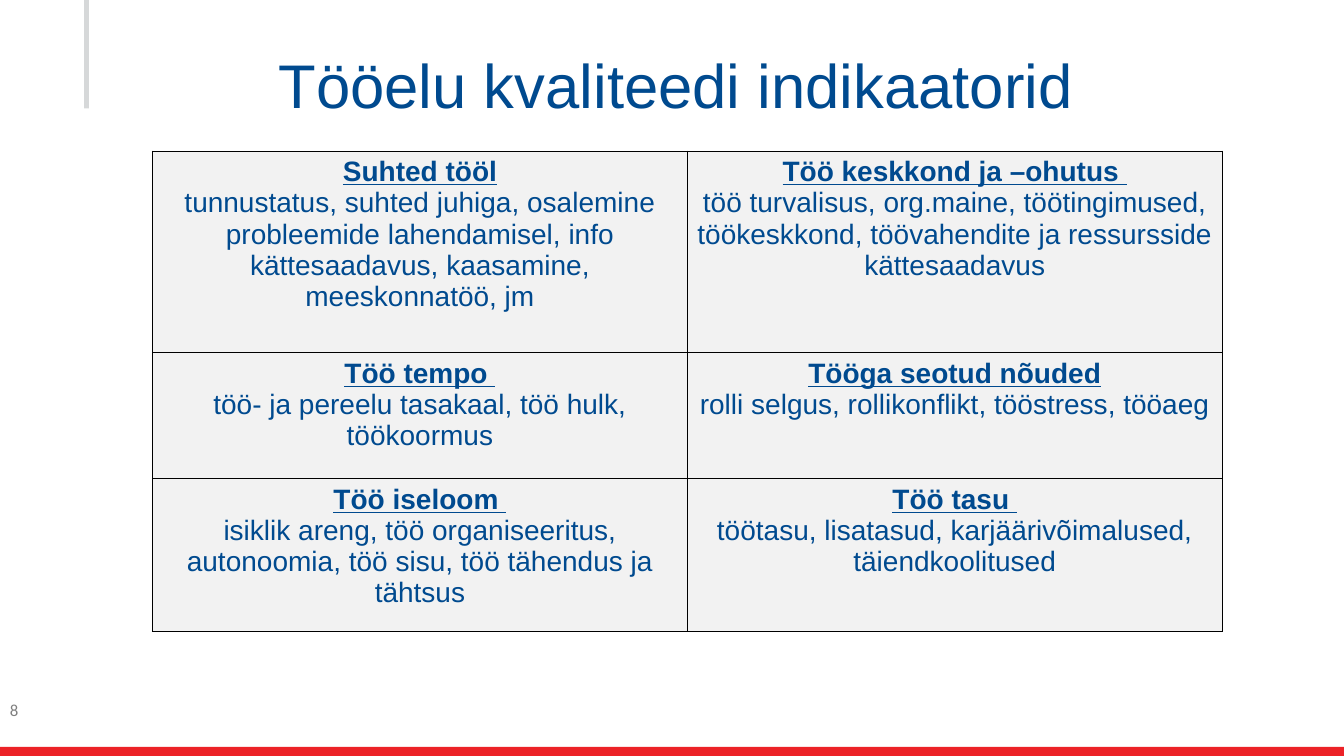
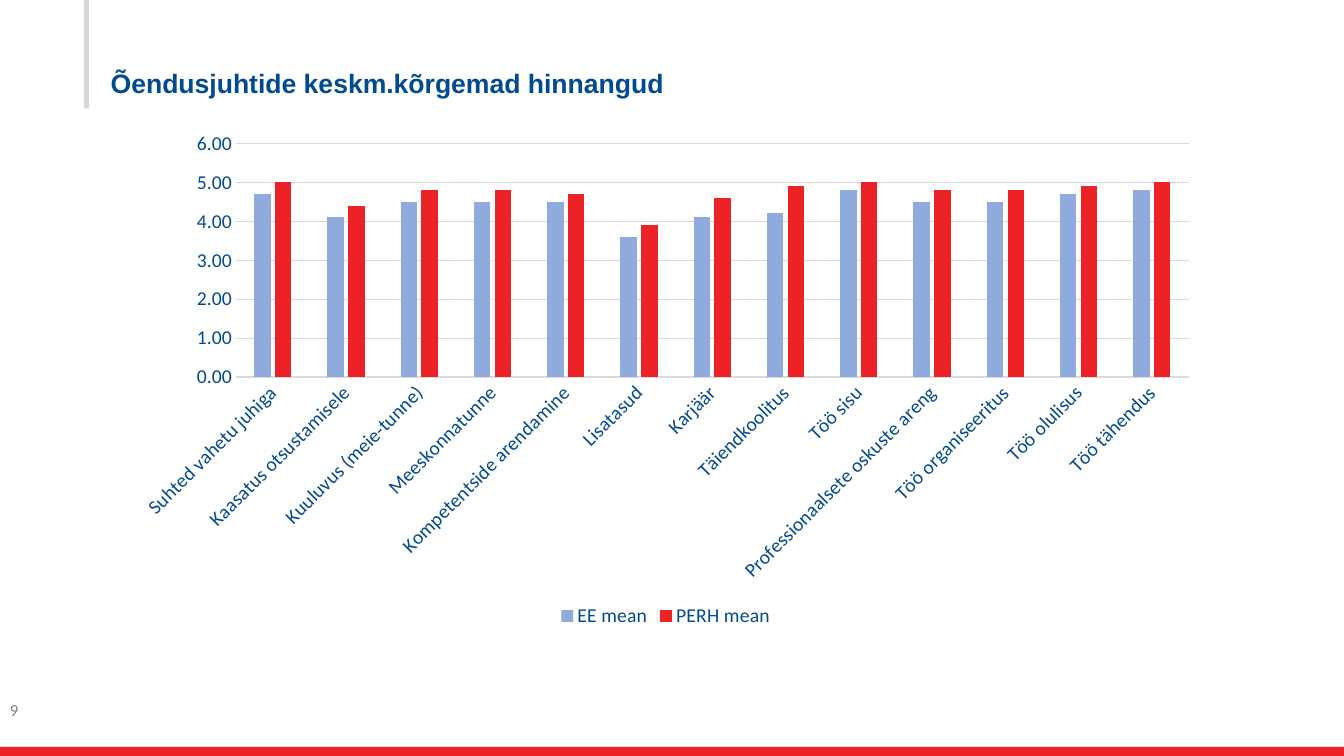
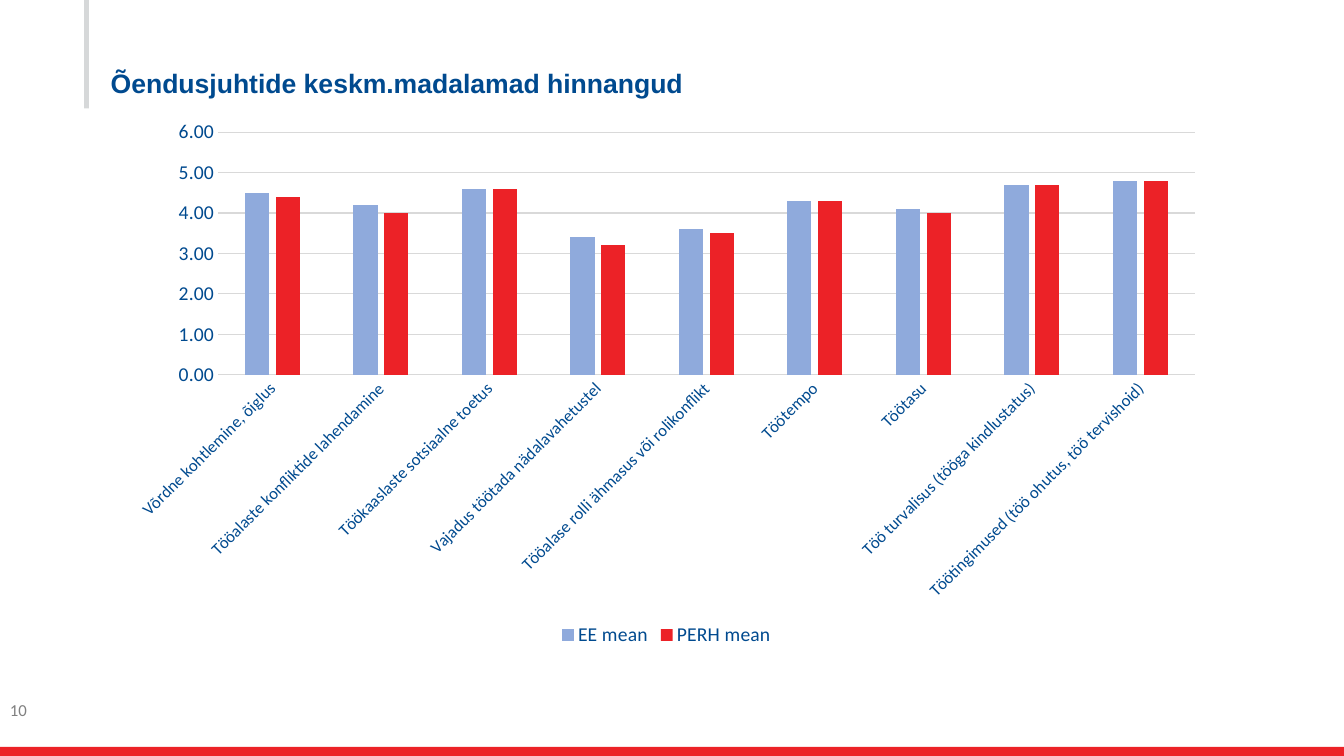
from pptx import Presentation
from pptx.chart.data import CategoryChartData
from pptx.dml.color import RGBColor
from pptx.enum.chart import XL_CHART_TYPE, XL_LEGEND_POSITION, XL_TICK_MARK
from pptx.enum.shapes import MSO_SHAPE
from pptx.enum.text import PP_ALIGN
from pptx.oxml import parse_xml
from pptx.oxml.ns import nsdecls
from pptx.util import Pt

WIDTH, HEIGHT = 960, 540
BLUE, LIGHT_BLUE, RED = "004A8F", "8FAADC", "EC2227"
GRAY, RULE_GRAY, GRID_GRAY, CELL_GRAY, BLACK = "808080", "D6D8D9", "D9D9D9", "F2F2F2", "000000"


def color(value):
    return RGBColor.from_string(value)


def format_font(font, size, name="Calibri", fill=BLUE, bold=False, underline=False):
    font.size = Pt(size)
    font.name = name
    font.bold = bold
    font.underline = underline
    font.color.rgb = color(fill)


def write(paragraph, text, align=PP_ALIGN.LEFT, **style):
    paragraph.alignment = align
    run = paragraph.add_run()
    run.text = text
    format_font(run.font, **style)


def outline_cell(cell):
    properties = cell._tc.get_or_add_tcPr()
    for index, side in enumerate(("lnL", "lnR", "lnT", "lnB")):
        properties.insert(index, parse_xml(
            f'<a:{side} {nsdecls("a")} w="{Pt(1)}"><a:solidFill>'
            f'<a:srgbClr val="{BLACK}"/></a:solidFill></a:{side}>'))


class Deck:
    def __init__(self):
        self.presentation = Presentation()
        self.presentation.slide_width = Pt(WIDTH)
        self.presentation.slide_height = Pt(HEIGHT)
        self.slide = None

    def add_slide(self, number):
        self.slide = self.presentation.slides.add_slide(self.presentation.slide_layouts[6])
        self.bar(60, 0, 3.5, 77.5, RULE_GRAY)
        self.bar(0, 533.5, WIDTH, 6.5, RED)
        self.text(0, 496, 216, 29, str(number), size=12, fill=GRAY)

    def bar(self, left, top, width, height, fill):
        shape = self.slide.shapes.add_shape(
            MSO_SHAPE.RECTANGLE, Pt(left), Pt(top), Pt(width), Pt(height))
        shape.shadow.inherit = False
        shape.fill.solid()
        shape.fill.fore_color.rgb = color(fill)
        shape.line.fill.background()

    def text(self, left, top, width, height, text, **style):
        box = self.slide.shapes.add_textbox(Pt(left), Pt(top), Pt(width), Pt(height))
        box.text_frame.word_wrap = True
        write(box.text_frame.paragraphs[0], text, **style)

    def title(self, text):
        self.text(69, 30, 828, 73, text, align=PP_ALIGN.CENTER, size=44, name="Arial")

    def heading(self, text):
        self.text(72, 44, 828, 32, text, size=19, name="Arial", bold=True)

    def table(self, left, top, column_width, row_heights, rows):
        columns = len(rows[0])
        table = self.slide.shapes.add_table(
            len(rows), columns, Pt(left), Pt(top),
            Pt(column_width * columns), Pt(sum(row_heights))).table
        for column in table.columns:
            column.width = Pt(column_width)
        for row, height, entries in zip(table.rows, row_heights, rows):
            row.height = Pt(height)
            for cell, (topic, details) in zip(row.cells, entries):
                cell.fill.solid()
                cell.fill.fore_color.rgb = color(CELL_GRAY)
                outline_cell(cell)
                style = dict(align=PP_ALIGN.CENTER, size=20, name="Arial")
                frame = cell.text_frame
                write(frame.paragraphs[0], topic, bold=True, underline=True, **style)
                write(frame.add_paragraph(), details, **style)

    def chart(self, left, top, width, height, ratings, category_size):
        data = CategoryChartData(number_format="0.00")
        data.categories = [name for name, _, _ in ratings]
        data.add_series("EE mean", [mean for _, mean, _ in ratings])
        data.add_series("PERH mean", [mean for _, _, mean in ratings])
        chart = self.slide.shapes.add_chart(
            XL_CHART_TYPE.COLUMN_CLUSTERED, Pt(left), Pt(top), Pt(width), Pt(height), data).chart
        chart.has_title = False
        format_font(chart.font, 10, fill=BLACK)
        chart.has_legend = True
        chart.legend.position = XL_LEGEND_POSITION.BOTTOM
        chart.legend.include_in_layout = False
        format_font(chart.legend.font, 14)

        plot = chart.plots[0]
        plot.gap_width = 219
        plot.overlap = -27
        plot.vary_by_categories = False
        for series, fill in zip(plot.series, (LIGHT_BLUE, RED)):
            series.format.fill.solid()
            series.format.fill.fore_color.rgb = color(fill)
            series.invert_if_negative = False

        categories, values = chart.category_axis, chart.value_axis
        for axis, size in ((categories, category_size), (values, 14)):
            axis.major_tick_mark = axis.minor_tick_mark = XL_TICK_MARK.NONE
            format_font(axis.tick_labels.font, size)
        body = categories._element.txPr.bodyPr
        body.set("rot", str(-45 * 60000))
        body.set("vert", "horz")
        values.minimum_scale, values.maximum_scale, values.major_unit = 0, 6, 1
        values.tick_labels.number_format = "0.00"
        values.tick_labels.number_format_is_linked = False
        values.format.line.fill.background()
        values.has_major_gridlines = True
        for line in (categories.format.line, values.major_gridlines.format.line):
            line.color.rgb = color(GRID_GRAY)
            line.width = Pt(0.75)


INDICATORS = [
    [("Suhted tööl",
      "tunnustatus, suhted juhiga, osalemine probleemide lahendamisel, info "
      "kättesaadavus, kaasamine, meeskonnatöö, jm"),
     ("Töö keskkond ja –ohutus ",
      "töö turvalisus, org.maine, töötingimused, töökeskkond, töövahendite ja "
      "ressursside kättesaadavus")],
    [("Töö tempo ", "töö- ja pereelu tasakaal, töö hulk, töökoormus"),
     ("Tööga seotud nõuded", "rolli selgus, rollikonflikt, tööstress, tööaeg")],
    [("Töö iseloom ",
      "isiklik areng, töö organiseeritus, autonoomia, töö sisu, töö tähendus ja tähtsus"),
     ("Töö tasu ", "töötasu, lisatasud, karjäärivõimalused, täiendkoolitused")],
]

HIGHER_RATINGS = [
    ("Suhted vahetu juhiga", 4.7, 5),
    ("Kaasatus otsustamisele", 4.1, 4.4),
    ("Kuuluvus (meie-tunne)", 4.5, 4.8),
    ("Meeskonnatunne", 4.5, 4.8),
    ("Kompetentside arendamine", 4.5, 4.7),
    ("Lisatasud", 3.6, 3.9),
    ("Karjäär", 4.1, 4.6),
    ("Täiendkoolitus", 4.2, 4.9),
    ("Töö sisu", 4.8, 5),
    ("Professionaalsete oskuste areng", 4.5, 4.8),
    ("Töö organiseeritus", 4.5, 4.8),
    ("Töö olulisus", 4.7, 4.9),
    ("Töö tähendus", 4.8, 5),
]

LOWER_RATINGS = [
    ("Võrdne kohtlemine, õiglus", 4.5, 4.4),
    ("Tööalaste konfliktide lahendamine", 4.2, 4),
    ("Töökaaslaste sotsiaalne toetus", 4.6, 4.6),
    ("Vajadus töötada nädalavahetustel", 3.4, 3.2),
    ("Tööalase rolli ähmasus või rolikonflikt", 3.6, 3.5),
    ("Töötempo", 4.3, 4.3),
    ("Töötasu", 4.1, 4),
    ("Töö turvalisus (tööga kindlustatus)", 4.7, 4.7),
    ("Töötingimused (töö ohutus, töö tervishoid)", 4.8, 4.8),
]


def main():
    deck = Deck()

    deck.add_slide(8)
    deck.title("Tööelu kvaliteedi indikaatorid")
    deck.table(109, 108, 382, (144, 90, 109), INDICATORS)

    deck.add_slide(9)
    deck.heading("Õendusjuhtide keskm.kõrgemad hinnangud")
    deck.chart(86.5, 86.5, 778, 365, HIGHER_RATINGS, category_size=14)

    deck.add_slide(10)
    deck.heading("Õendusjuhtide keskm.madalamad hinnangud")
    deck.chart(83, 78, 786, 387, LOWER_RATINGS, category_size=12)

    deck.presentation.save("out.pptx")


if __name__ == "__main__":
    main()
